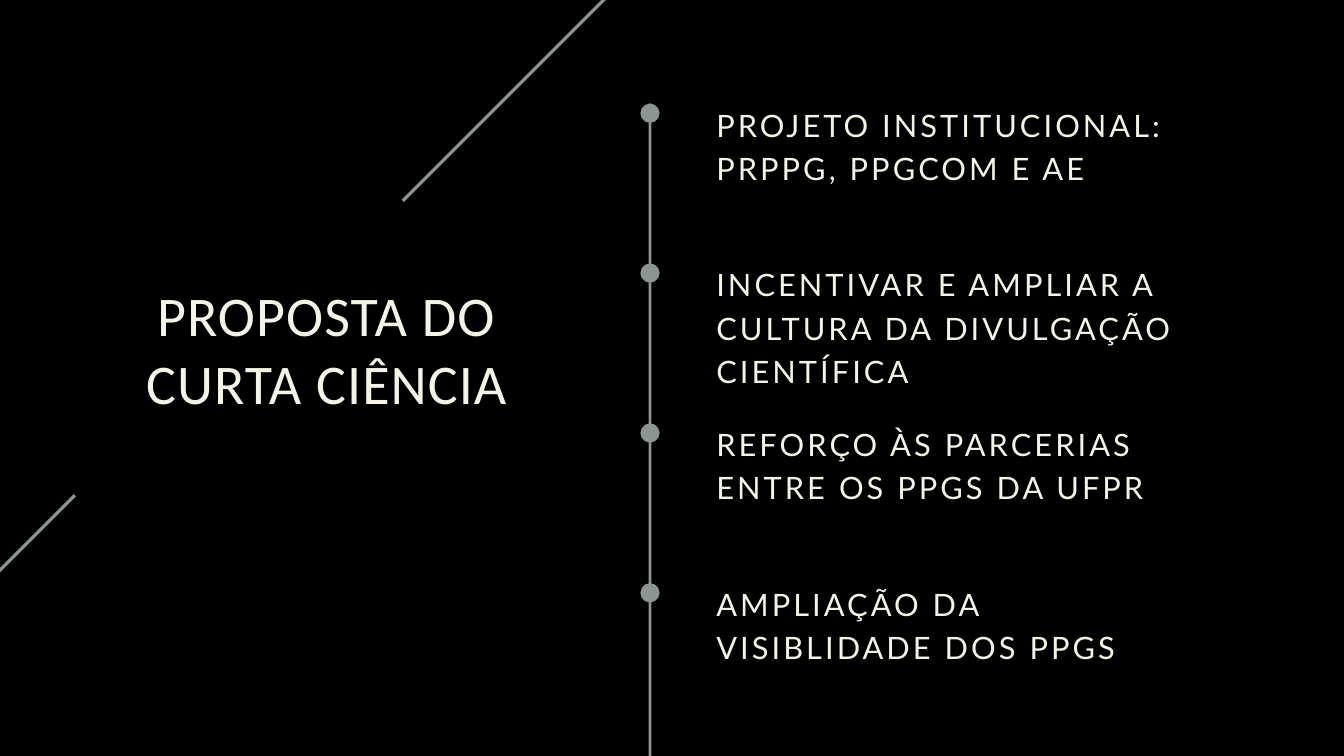
from dataclasses import dataclass

from pptx import Presentation
from pptx import util as u
from pptx.dml.color import RGBColor
from pptx.enum import shapes, text


@dataclass(frozen=True)
class TextStyle:
    font: str
    size: float
    leading: float
    tracking: float
    align: text.PP_ALIGN


@dataclass(frozen=True)
class Theme:
    background: RGBColor = RGBColor(0x00, 0x00, 0x00)
    ink: RGBColor = RGBColor(0xF4, 0xF3, 0xE6)
    accent: RGBColor = RGBColor(0x8B, 0x96, 0x94)
    title: TextStyle = TextStyle("Calibri", 60, 72, 1.2, text.PP_ALIGN.CENTER)
    item: TextStyle = TextStyle("Lato", 33, 46.2, 3.3, text.PP_ALIGN.LEFT)


@dataclass(frozen=True)
class Box:
    left: float
    top: float
    width: float
    height: float

    def emu(self) -> tuple:
        return tuple(u.Pt(v) for v in (self.left, self.top, self.width, self.height))


@dataclass(frozen=True)
class Milestone:
    label: str
    lines: int


THEME = Theme()
MILESTONES = [
    Milestone("PROJETO INSTITUCIONAL: PRPPG, PPGCOM E AE", 2),
    Milestone("INCENTIVAR E AMPLIAR A CULTURA DA DIVULGAÇÃO CIENTÍFICA", 3),
    Milestone("REFORÇO ÀS PARCERIAS ENTRE OS PPGS DA UFPR", 2),
    Milestone("AMPLIAÇÃO DA VISIBLIDADE DOS PPGS", 2),
]
RAIL = Box(694.9, 111, 3, 744.4)
DIAGONALS = [Box(607, -212.4, 3.4, 501), Box(-98.6, 457.2, 3.4, 501)]
STEP = 171.3
DOT = 20.6
ITEM_LEFT, ITEM_TOP, ITEM_WIDTH = 767.5, 107.3, 522.7


def add_text(s, box: Box, content: str, style: TextStyle) -> None:
    tf = s.shapes.add_textbox(*box.emu()).text_frame
    tf.word_wrap = True
    tf.auto_size = text.MSO_AUTO_SIZE.SHAPE_TO_FIT_TEXT
    tf.margin_left = tf.margin_right = tf.margin_top = tf.margin_bottom = 0
    tf.text = content
    p = tf.paragraphs[0]
    p.alignment = style.align
    p.line_spacing = u.Pt(style.leading)
    r = p.runs[0]
    r.font.name = style.font
    r.font.size = u.Pt(style.size)
    r.font.color.rgb = THEME.ink
    r._r.get_or_add_rPr().set("spc", str(round(style.tracking * 100)))


def add_accent(s, kind: shapes.MSO_SHAPE, box: Box, rotation: float = 0) -> None:
    sp = s.shapes.add_shape(kind, *box.emu())
    sp.shadow.inherit = False
    sp.fill.solid()
    sp.fill.fore_color.rgb = THEME.accent
    sp.line.fill.background()
    sp.rotation = rotation


def add_timeline(s) -> None:
    add_accent(s, shapes.MSO_SHAPE.RECTANGLE, RAIL)
    dot_left = RAIL.left + (RAIL.width - DOT) / 2
    for i, milestone in enumerate(MILESTONES):
        offset = i * STEP
        add_accent(s, shapes.MSO_SHAPE.OVAL, Box(dot_left, RAIL.top + offset, DOT, DOT))
        height = milestone.lines * THEME.item.leading
        box = Box(ITEM_LEFT, ITEM_TOP + offset, ITEM_WIDTH, height)
        add_text(s, box, milestone.label, THEME.item)


def main() -> None:
    prs = Presentation()
    prs.slide_width, prs.slide_height = u.Pt(1440), u.Pt(810)
    s = prs.slides.add_slide(prs.slide_layouts[6])
    s.background.fill.solid()
    s.background.fill.fore_color.rgb = THEME.background
    add_text(s, Box(91.4, 301, 517, 217.4), "PROPOSTA DO CURTA CIÊNCIA", THEME.title)
    add_timeline(s)
    for box in DIAGONALS:
        add_accent(s, shapes.MSO_SHAPE.RECTANGLE, box, 45)
    prs.save("out.pptx")


if __name__ == "__main__":
    main()
